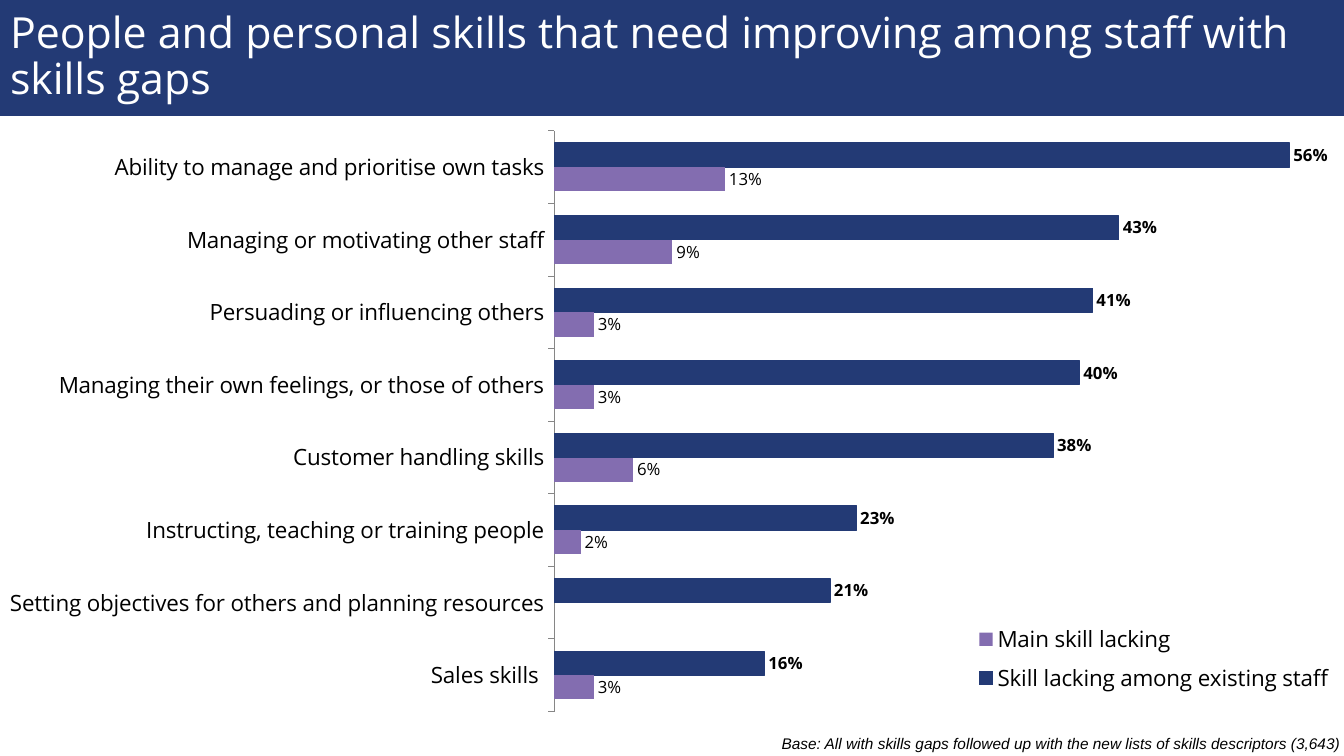
from dataclasses import dataclass

from lxml import etree
from pptx import Presentation
from pptx.chart.data import CategoryChartData
from pptx.dml.color import RGBColor
from pptx.enum.chart import (XL_CHART_TYPE, XL_LABEL_POSITION,
                             XL_LEGEND_POSITION, XL_TICK_LABEL_POSITION,
                             XL_TICK_MARK)
from pptx.enum.shapes import MSO_SHAPE
from pptx.enum.text import MSO_ANCHOR, PP_ALIGN
from pptx.oxml.ns import qn
from pptx.util import Emu, Pt

CLUSTERED = XL_CHART_TYPE.BAR_CLUSTERED
OUTSIDE_END = XL_LABEL_POSITION.OUTSIDE_END
LEGEND_RIGHT = XL_LEGEND_POSITION.RIGHT
LABELS_LOW = XL_TICK_LABEL_POSITION.LOW
TICK_OUT, TICK_NONE = XL_TICK_MARK.OUTSIDE, XL_TICK_MARK.NONE
RECTANGLE = MSO_SHAPE.RECTANGLE
MIDDLE, TOP = MSO_ANCHOR.MIDDLE, MSO_ANCHOR.TOP
LEFT, RIGHT = PP_ALIGN.LEFT, PP_ALIGN.RIGHT


@dataclass(frozen=True)
class Theme:
    navy: str = "233A75"
    purple: str = "836DB0"
    black: str = "000000"
    white: str = "FFFFFF"
    axis: str = "868686"
    font: str = "Open Sans"
    note_font: str = "Arial"
    title_size: float = 30.6
    axis_size: int = 16
    label_size: int = 12
    note_size: int = 11


THEME = Theme()
SKILLS = [
    ("Ability to manage and prioritise own tasks", 0.56, 0.13),
    ("Managing or motivating other staff", 0.43, 0.09),
    ("Persuading or influencing others", 0.41, 0.03),
    ("Managing their own feelings, or those of others", 0.40, 0.03),
    ("Customer handling skills", 0.38, 0.06),
    ("Instructing, teaching or training people", 0.23, 0.02),
    ("Setting objectives for others and planning resources", 0.21, None),
    ("Sales skills ", 0.16, 0.03),
]
SERIES = [
    ("Skill lacking among existing staff", THEME.navy, True),
    ("Main skill lacking ", THEME.purple, False),
]


def px(length):
    return Emu(round(length * 914400 / 100.8))


def assign(target, values):
    for name, value in values.items():
        setattr(target, name, value)


def manual_layout(x, y, width, height, inner=False):
    layout = etree.Element(qn("c:layout"))
    manual = etree.SubElement(layout, qn("c:manualLayout"))
    values = {"layoutTarget": "inner"} if inner else {}
    values |= {"xMode": "edge", "yMode": "edge",
               "x": x, "y": y, "w": width, "h": height}
    for name, value in values.items():
        etree.SubElement(manual, qn(f"c:{name}")).set("val", str(value))
    return layout


class SlideBuilder:
    def __init__(self, presentation, theme):
        self.theme = theme
        self.slide = presentation.slides.add_slide(presentation.slide_layouts[6])

    def style_font(self, font, size, color, name=None, **extra):
        assign(font, {"size": Pt(size), "name": name or self.theme.font, **extra})
        font.color.rgb = RGBColor.from_string(color)

    def add_text(self, shape, text, size, color, inset, anchor, paragraph_format, **font):
        frame = shape.text_frame
        assign(frame, {"word_wrap": True, "vertical_anchor": anchor,
                       **{f"margin_{side}": px(inset)
                          for side in ("left", "top", "right", "bottom")}})
        paragraph = frame.paragraphs[0]
        assign(paragraph, paragraph_format)
        run = paragraph.add_run()
        run.text = text
        self.style_font(run.font, size, color, **font)

    def banner(self, text, box):
        shape = self.slide.shapes.add_shape(RECTANGLE, *map(px, box))
        shape.shadow.inherit = False
        shape.fill.solid()
        shape.fill.fore_color.rgb = RGBColor.from_string(self.theme.navy)
        shape.line.fill.background()
        self.add_text(shape, text, self.theme.title_size, self.theme.white, 10,
                      MIDDLE, {"alignment": LEFT, "line_spacing": 0.88})

    def note(self, text, box):
        shape = self.slide.shapes.add_textbox(*map(px, box))
        self.add_text(shape, text, self.theme.note_size, self.theme.black, 1,
                      TOP, {"alignment": RIGHT}, name=self.theme.note_font, italic=True)

    def bar_chart(self, rows, series_styles, box):
        categories, *columns = zip(*rows)
        data = CategoryChartData(number_format="0%")
        data.categories = categories
        for (name, _, _), values in zip(series_styles, columns):
            data.add_series(name, values)
        chart = self.slide.shapes.add_chart(CLUSTERED, *map(px, box), data).chart
        chart.has_title = False
        self.style_font(chart.font, self.theme.axis_size, self.theme.black)
        assign(chart.plots[0], {"gap_width": 100, "overlap": 0, "vary_by_categories": False})
        self.bars(chart, series_styles)
        self.axes(chart)
        self.legend(chart)
        plot_area = chart.plots[0]._element.getparent()
        for layout in plot_area.findall(qn("c:layout")):
            plot_area.remove(layout)
        plot_area.insert(0, manual_layout(0.414, 0.142, 0.586, 0.801, inner=True))

    def bars(self, chart, series_styles):
        for series, (_, color, bold) in zip(chart.plots[0].series, series_styles):
            series.format.fill.solid()
            series.format.fill.fore_color.rgb = RGBColor.from_string(color)
            if bold:
                series.format.line.color.rgb = RGBColor.from_string(color)
                series.format.line.width = Pt(0.75)
            labels = series.data_labels
            assign(labels, {"show_value": True, "number_format": "0%",
                            "number_format_is_linked": False,
                            "position": OUTSIDE_END})
            self.style_font(labels.font, self.theme.label_size, self.theme.black, bold=bold)

    def axes(self, chart):
        assign(chart.category_axis, {
            "reverse_order": True, "major_tick_mark": TICK_OUT,
            "minor_tick_mark": TICK_NONE, "tick_label_position": LABELS_LOW,
            "has_major_gridlines": False})
        line = chart.category_axis.format.line
        line.color.rgb = RGBColor.from_string(self.theme.axis)
        line.width = Pt(0.75)
        self.style_font(chart.category_axis.tick_labels.font,
                        self.theme.axis_size, self.theme.black)
        assign(chart.value_axis, {
            "minimum_scale": 0, "maximum_scale": 0.6,
            "has_major_gridlines": False, "visible": False})

    def legend(self, chart):
        chart.has_legend = True
        legend = chart.legend
        assign(legend, {"position": LEGEND_RIGHT, "include_in_layout": True})
        self.style_font(legend.font, self.theme.axis_size, self.theme.black)
        element = legend._element
        for layout in element.findall(qn("c:layout")):
            element.remove(layout)
        position = element.find(qn("c:legendPos"))
        position.addnext(manual_layout(0.72, 0.81, 0.28, 0.12))


def main():
    presentation = Presentation()
    assign(presentation, {"slide_width": px(1344), "slide_height": px(756)})
    builder = SlideBuilder(presentation, THEME)

    # Skills chart
    builder.bar_chart(SKILLS, SERIES, (-2, 28, 1344, 725))

    # Title banner
    builder.banner("People and personal skills that need improving among "
                   "staff with skills gaps", (0, 0, 1344, 116))

    # Base note
    builder.note("Base: All with skills gaps followed up with the new lists "
                 "of skills descriptors (3,643)", (210, 733, 1132, 21))

    presentation.save("out.pptx")


if __name__ == "__main__":
    main()
